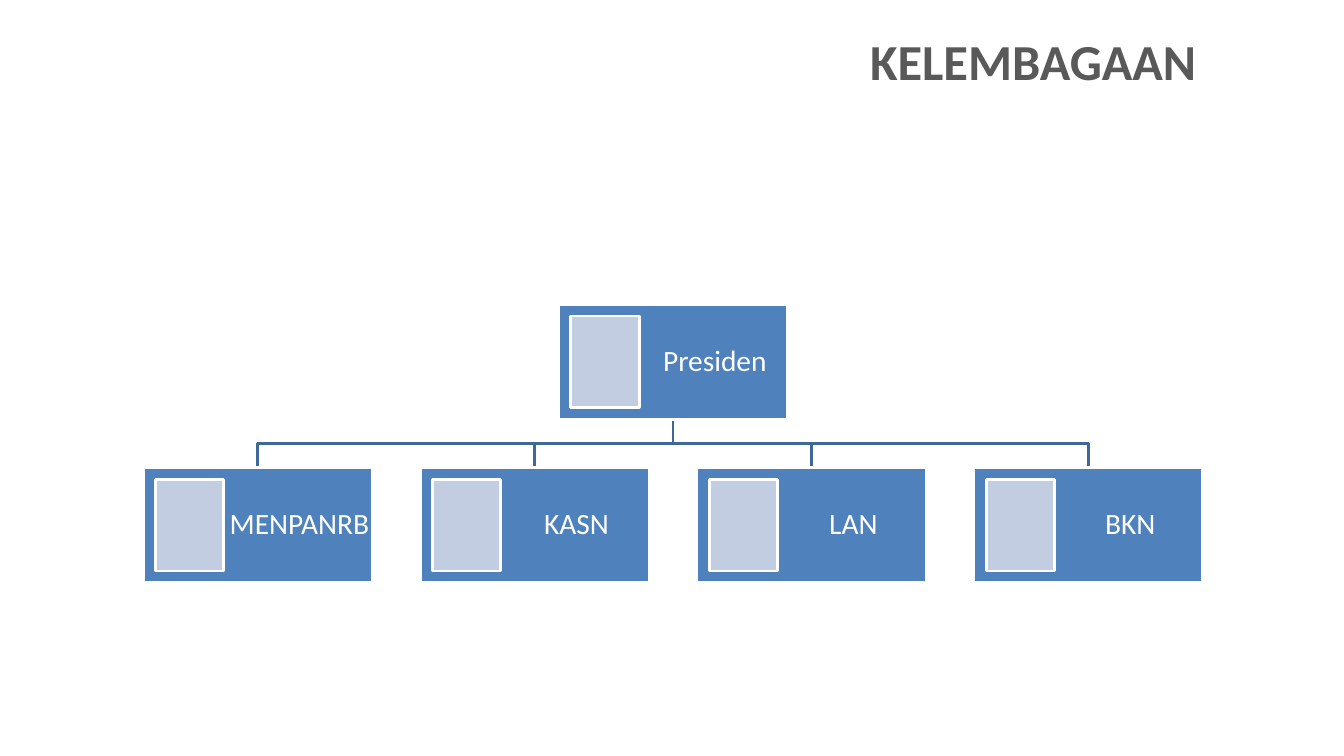
from pptx import Presentation
from pptx.dml.color import RGBColor
from pptx.enum.shapes import MSO_SHAPE
from pptx.enum.text import MSO_ANCHOR, PP_ALIGN
from pptx.util import Inches, Pt

WHITE = RGBColor(0xFF, 0xFF, 0xFF)
GREY = RGBColor(0x59, 0x59, 0x59)
BLUE = RGBColor(0x4F, 0x81, 0xBD)
PALE = RGBColor(0xC2, 0xCD, 0xE1)
LINE = RGBColor(0x3F, 0x67, 0x97)

BOX_W, BOX_H = 2.27, 1.14
TOP_X, TOP_Y = 5.54, 3.02
ROW_X, ROW_Y, STEP = 1.42, 4.64, 2.747
AGENCIES = ["MENPANRB", "KASN", "LAN", "BKN"]

prs = Presentation()
prs.slide_width, prs.slide_height = Inches(13.33), Inches(7.5)
slide = prs.slides.add_slide(prs.slide_layouts[5])


def add_rect(x, y, w, h, color):
    sp = slide.shapes.add_shape(MSO_SHAPE.RECTANGLE, Inches(x), Inches(y), Inches(w), Inches(h))
    sp.shadow.inherit = False
    sp.fill.solid()
    sp.fill.fore_color.rgb = color
    sp.line.color.rgb = WHITE
    sp.line.width = Pt(2)
    return sp


# Title
title = slide.shapes.title
title.left, title.top, title.width, title.height = Inches(8.53), Inches(0.25), Inches(3.78), Inches(0.47)
tf = title.text_frame
tf.text = "KELEMBAGAAN"
tf.vertical_anchor = MSO_ANCHOR.TOP
p = tf.paragraphs[0]
p.alignment = PP_ALIGN.LEFT
p.font.name, p.font.size, p.font.bold = "Calibri", Pt(36), True
p.font.color.rgb = GREY

# Branches from the president to each agency
boxes = [("Presiden", TOP_X, TOP_Y)]
boxes += [(name, ROW_X + i * STEP, ROW_Y) for i, name in enumerate(AGENCIES)]
start_x, start_y = TOP_X + BOX_W / 2, TOP_Y + BOX_H
mid_y = (start_y + ROW_Y) / 2
for name, x, y in boxes[1:]:
    end_x = x + BOX_W / 2
    branch = slide.shapes.build_freeform(Inches(start_x), Inches(start_y))
    branch.add_line_segments(
        [(Inches(px), Inches(py)) for px, py in [(start_x, mid_y), (end_x, mid_y), (end_x, y)]],
        close=False)
    sp = branch.convert_to_shape()
    sp.shadow.inherit = False
    sp.fill.background()
    sp.line.color.rgb = LINE
    sp.line.width = Pt(2)

# Boxes, each with a photo frame on the left
for name, x, y in boxes:
    tf = add_rect(x, y, BOX_W, BOX_H, BLUE).text_frame
    tf.text = name
    tf.word_wrap = True
    tf.vertical_anchor = MSO_ANCHOR.MIDDLE
    tf.margin_left = Inches(0.84)
    tf.margin_right = tf.margin_top = tf.margin_bottom = Inches(0.01)
    p = tf.paragraphs[0]
    p.alignment = PP_ALIGN.CENTER
    p.line_spacing = 0.9
    p.font.name, p.font.size = "Calibri", Pt(21)
    p.font.color.rgb = WHITE
    add_rect(x + 0.12, y + 0.115, 0.68, 0.91, PALE)

prs.save("out.pptx")
